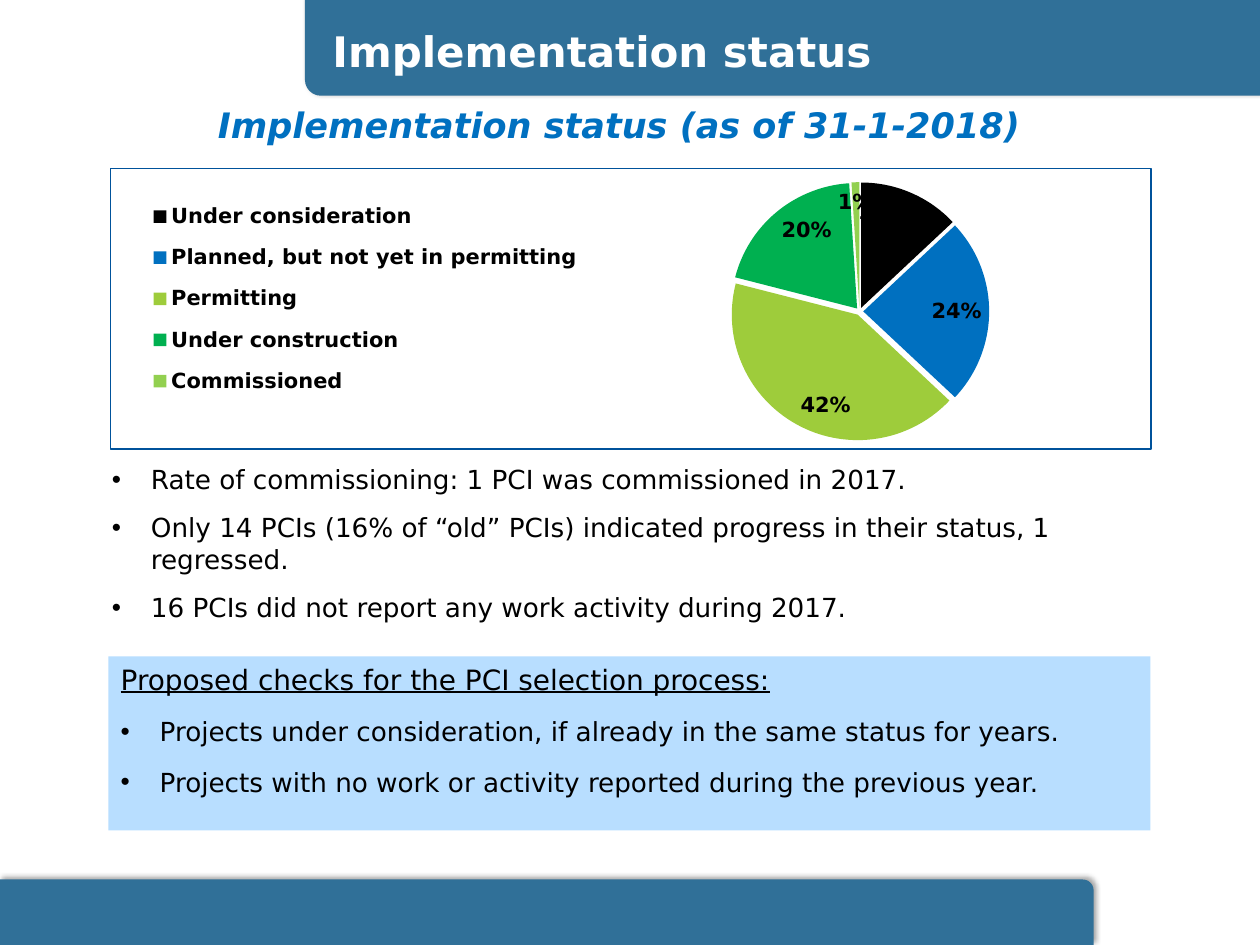
from lxml.etree import SubElement
from pptx import Presentation
from pptx.chart.data import CategoryChartData
from pptx.dml.color import RGBColor
from pptx.enum.chart import XL_CHART_TYPE, XL_LABEL_POSITION, XL_LEGEND_POSITION
from pptx.enum.shapes import MSO_SHAPE
from pptx.enum.text import MSO_ANCHOR, PP_ALIGN
from pptx.oxml import parse_xml
from pptx.oxml.ns import nsdecls, qn
from pptx.util import Inches, Pt

FONT = "DejaVu Sans"
BLACK = RGBColor(0, 0, 0)
WHITE = RGBColor(255, 255, 255)
TEAL = RGBColor(0x30, 0x70, 0x98)
BLUE = RGBColor(0x00, 0x70, 0xC0)
LIME = RGBColor(0x9E, 0xCC, 0x3B)
GREEN = RGBColor(0x00, 0xB0, 0x50)
LIGHT_GREEN = RGBColor(0x92, 0xD0, 0x50)
PALE_BLUE = RGBColor(0xB8, 0xDE, 0xFF)
BORDER = RGBColor(0x00, 0x52, 0x9B)

BANDS = [((0, 6.98, 8.68, 0.52), 0), ((2.42, 0, 7.58, 0.76), 180)]
HEADINGS = [
    ("Implementation status", (2.54, 0.15, 4.54, 0.5),
     dict(size=Pt(24), bold=True)
     , WHITE),
    ("Implementation status (as of 31-1-2018)", (1.63, 0.77, 6.75, 0.44),
     dict(size=Pt(20), bold=True, italic=True), BLUE),
]
STATUS = [
    ("Under consideration", 13, BLACK),
    ("Planned, but not yet in permitting", 24, BLUE),
    ("Permitting", 42, LIME),
    ("Under construction", 20, GREEN),
    ("Commissioned", 1, LIGHT_GREEN),
]
FINDINGS = [
    "Rate of commissioning: 1 PCI was commissioned in 2017.",
    "Only 14 PCIs (16% of “old” PCIs) indicated progress in their status, 1 regressed.",
    "16 PCIs did not report any work activity during 2017.",
]
CHECKS_TITLE = "Proposed checks for the PCI selection process:"
CHECKS = [
    "Projects under consideration, if already in the same status for years.",
    "Projects with no work or activity reported during the previous year.",
]


def set_font(font, color=BLACK, **values):
    for name, value in dict(values, name=FONT).items():
        setattr(font, name, value)
    font.color.rgb = color


def add_filled(slide, kind, box, color):
    s = slide.shapes.add_shape(kind, *map(Inches, box))
    s.fill.solid()
    s.fill.fore_color.rgb = color
    s.line.fill.background()
    s.shadow.inherit = False
    return s


def add_band(slide, box, rotation):
    s = add_filled(slide, MSO_SHAPE.ROUND_1_RECTANGLE, box, TEAL)
    s.rotation = rotation
    effects = s._element.spPr.find(qn("a:effectLst"))
    shadow = SubElement(effects, qn("a:outerShdw"), blurRad=str(Pt(3.1)),
                        dist=str(Pt(1.8)), dir=str(306 * 60000), rotWithShape="0")
    color = SubElement(shadow, qn("a:srgbClr"), val="000000")
    SubElement(color, qn("a:alpha"), val="35000")


def add_paragraph(tf, text, first, gap=0, bullet=False, **values):
    p = tf.paragraphs[0] if first else tf.add_paragraph()
    p.alignment = PP_ALIGN.LEFT
    if not first:
        p.space_before = Pt(gap)
    if bullet:
        pPr = p._p.get_or_add_pPr()
        pPr.set("marL", str(Inches(0.31)))
        pPr.set("indent", str(Inches(-0.31)))
        SubElement(pPr, qn("a:buFont"), typeface="Arial")
        SubElement(pPr, qn("a:buChar"), char="•")
    r = p.add_run()
    r.text = text
    set_font(r.font, **values)


def place(parent, index, target, x, y, w, h):
    """Give a chart part a fixed layout in fractions of the chart."""
    for old in parent.findall(qn("c:layout")):
        parent.remove(old)
    inner = f'<c:layoutTarget val="{target}"/>' if target else ""
    values = "".join(f'<c:{tag} val="{value}"/>' for tag, value in [
        ("xMode", "edge"), ("yMode", "edge"), ("x", x), ("y", y), ("w", w), ("h", h)])
    parent.insert(index, parse_xml(
        f'<c:layout {nsdecls("c")}><c:manualLayout>{inner}{values}</c:manualLayout></c:layout>'))


def add_status_chart(slide, box):
    data = CategoryChartData()
    data.categories = [name for name, _, _ in STATUS]
    data.add_series("Series 1", [value for _, value, _ in STATUS])
    chart = slide.shapes.add_chart(XL_CHART_TYPE.PIE, *map(Inches, box), data).chart
    chart.has_title = False
    set_font(chart.font, size=Pt(10))
    chart.plots[0].vary_by_categories = True

    series = chart.plots[0].series[0]
    for i, (_, _, color) in enumerate(STATUS):
        fill = series.points[i].format.fill
        fill.solid()
        fill.fore_color.rgb = color
    series._element.find(qn("c:dPt")).addprevious(
        parse_xml(f'<c:explosion {nsdecls("c")} val="3"/>'))

    labels = series.data_labels
    labels.show_value = False
    labels.show_percentage = True
    labels.number_format = "0%"
    labels.number_format_is_linked = False
    labels.position = XL_LABEL_POSITION.INSIDE_END
    set_font(labels.font, size=Pt(12), bold=True)

    chart.has_legend = True
    legend = chart.legend
    legend.position = XL_LEGEND_POSITION.BOTTOM
    legend.include_in_layout = False
    set_font(legend.font, size=Pt(12), bold=True)
    place(legend._element, 1, None, 0.01, 0.07, 0.47, 0.79)

    space = chart._chartSpace
    place(space.chart.plotArea, 0, "inner", 0.57, 0.05, 0.3, 0.92)
    space.chart.addnext(parse_xml(
        f'<c:spPr {nsdecls("c", "a")}><a:noFill/><a:ln w="{Pt(0.75)}"><a:solidFill>'
        f'<a:srgbClr val="{BORDER}"/></a:solidFill></a:ln></c:spPr>'))


prs = Presentation()
prs.slide_width, prs.slide_height = Inches(10), Inches(7.5)
slide = prs.slides.add_slide(prs.slide_layouts[6])

for box, rotation in BANDS:
    add_band(slide, box, rotation)
add_status_chart(slide, (0.87, 1.33, 8.27, 2.24))

for text, box, values, color in HEADINGS:
    tf = slide.shapes.add_textbox(*map(Inches, box)).text_frame
    tf.word_wrap = False
    add_paragraph(tf, text, True, color=color, **values)

tf = slide.shapes.add_textbox(*map(Inches, (0.79, 3.63, 8.34, 1.38))).text_frame
tf.word_wrap = True
for i, text in enumerate(FINDINGS):
    add_paragraph(tf, text, i == 0, gap=9.5, bullet=True, size=Pt(15))

tf = add_filled(slide, MSO_SHAPE.RECTANGLE, (0.86, 5.21, 8.27, 1.38), PALE_BLUE).text_frame
tf.word_wrap = True
tf.vertical_anchor = MSO_ANCHOR.TOP
add_paragraph(tf, CHECKS_TITLE, True, size=Pt(16), underline=True)
for text in CHECKS:
    add_paragraph(tf, text, False, gap=11, bullet=True, size=Pt(15))

prs.save("out.pptx")
